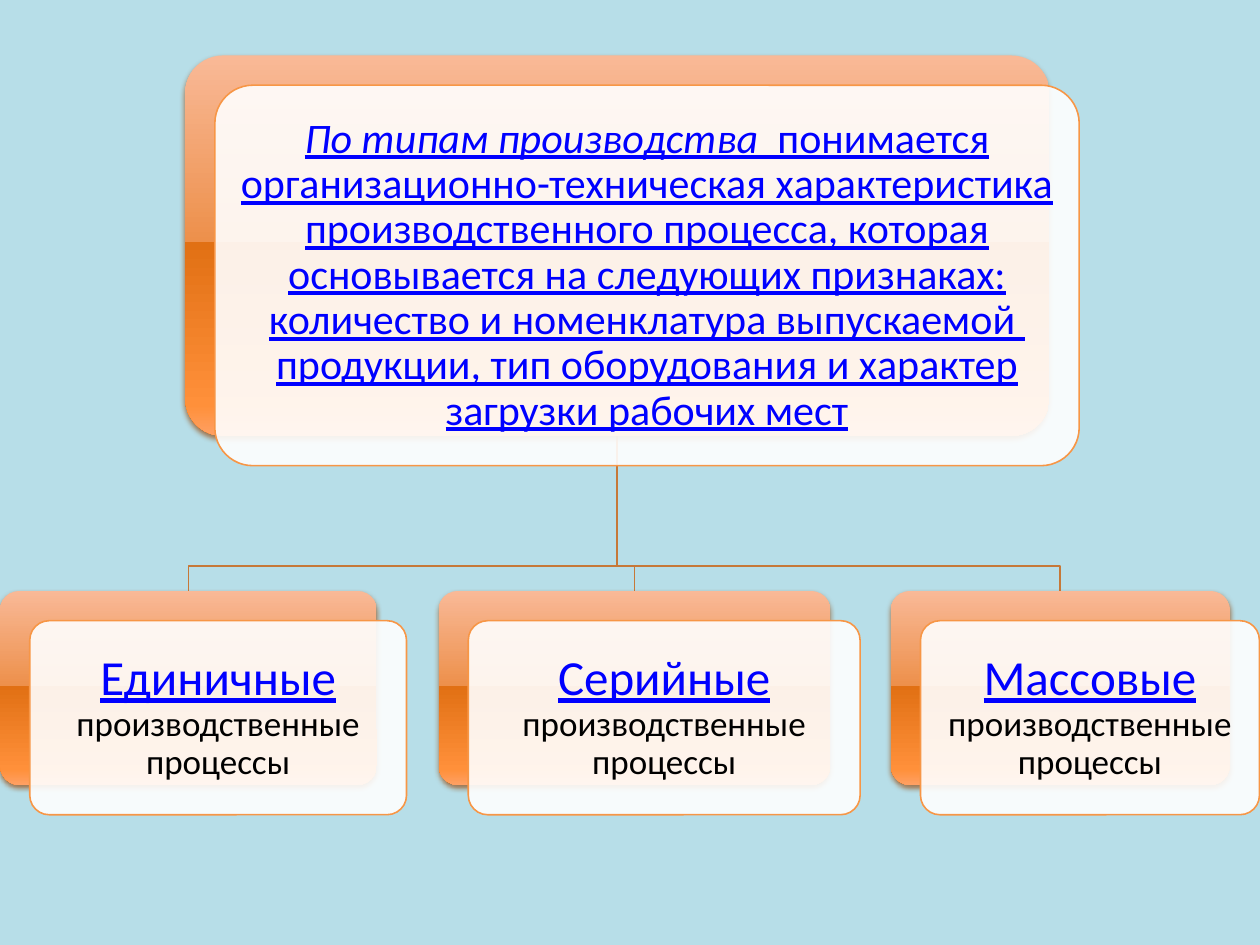
from lxml import etree
from pptx import Presentation
from pptx.dml.color import RGBColor
from pptx.enum.shapes import MSO_SHAPE
from pptx.enum.text import MSO_ANCHOR, PP_ALIGN
from pptx.oxml import parse_xml
from pptx.oxml.ns import nsdecls, qn
from pptx.util import Pt

THEME = {
    "font": "Calibri",
    "background": RGBColor.from_string("B7DEE8"),
    "connector": RGBColor.from_string("C67838"),
    "panel": RGBColor.from_string("FFFFFF"),
    "border": RGBColor.from_string("F79646"),
    "link": RGBColor.from_string("0000FF"),
    "text": RGBColor.from_string("000000"),
    "gradient": [(0, "F9B997"), (49, "ED904B"), (49, "E17014"),
                 (92, "FF903A"), (100, "FFA063")],
    "shadow": "995D2B",
    "definition_size": 24,
    "name_size": 28,
    "detail_size": 20,
}
LINE_WIDTH = Pt(0.9)
CORNER = 0.1
PANEL_SHIFT = 17
BEND_Y = 323.3

link = {"color": THEME["link"], "underline": True}
definition = {**link, "size": THEME["definition_size"]}
root = {
    "box": (105.8, 31.7, 493.9, 217.4),
    "margin": 7.2,
    "runs": [
        ("По типам производства ", {**definition, "italic": True}),
        (" понимается организационно-техническая характеристика "
         "производственного процесса, которая основывается на следующих "
         "признаках: количество и номенклатура выпускаемой  продукции, "
         "тип оборудования и характер загрузки рабочих мест", definition),
    ],
}
children = [
    {
        "box": (left, 337.7, width, 110.9),
        "margin": 8.6,
        "runs": [
            (name, {**link, "size": THEME["name_size"]}),
            (" производственные процессы",
             {"color": THEME["text"], "size": THEME["detail_size"]}),
        ],
    }
    for name, left, width in [("Единичные", 0, 215.3),
                              ("Серийные", 250.6, 223.9),
                              ("Массовые", 509, 193.7)]
]

presentation = Presentation()
presentation.slide_width, presentation.slide_height = Pt(720), Pt(540)
slide = presentation.slides.add_slide(presentation.slide_layouts[6])
slide.background.fill.solid()
slide.background.fill.fore_color.rgb = THEME["background"]


def add_rounded(left, top, width, height):
    shape = slide.shapes.add_shape(
        MSO_SHAPE.ROUNDED_RECTANGLE, Pt(left), Pt(top), Pt(width), Pt(height))
    shape.adjustments[0] = CORNER
    shape.shadow.inherit = False
    return shape


# Elbow lines from the bottom of the root card to the top of each child
left, top, width, height = root["box"]
root_x, root_bottom = left + width / 2, top + height
for child in children:
    left, top, width, height = child["box"]
    child_x = left + width / 2
    builder = slide.shapes.build_freeform(Pt(root_x), Pt(root_bottom))
    builder.add_line_segments(
        [(Pt(root_x), Pt(BEND_Y)), (Pt(child_x), Pt(BEND_Y)), (Pt(child_x), Pt(top))],
        close=False)
    elbow = builder.convert_to_shape()
    elbow.shadow.inherit = False
    elbow.fill.background()
    elbow.line.color.rgb = THEME["connector"]
    elbow.line.width = LINE_WIDTH

# Each card is a gradient back with a translucent text panel shifted over it
for card in [root, *children]:
    left, top, width, height = card["box"]

    back = add_rounded(left, top, width, height)
    back.line.fill.background()
    back.fill.gradient()
    properties = back._element.spPr
    gradient = properties.find(qn("a:gradFill"))
    stops = gradient.find(qn("a:gsLst"))
    for stop in list(stops):
        stops.remove(stop)
    for position, color in THEME["gradient"]:
        stops.append(parse_xml(
            f'<a:gs {nsdecls("a")} pos="{position * 1000}">'
            f'<a:srgbClr val="{color}"/></a:gs>'))
    gradient.find(qn("a:lin")).set("ang", "5400000")
    properties.find(qn("a:effectLst")).append(parse_xml(
        f'<a:outerShdw {nsdecls("a")} blurRad="{Pt(3.1)}" dist="{Pt(2)}" '
        f'dir="5400000" rotWithShape="0"><a:srgbClr val="{THEME["shadow"]}">'
        '<a:alpha val="83000"/></a:srgbClr></a:outerShdw>'))

    panel = add_rounded(left + PANEL_SHIFT, top + PANEL_SHIFT, width, height)
    panel.fill.solid()
    panel.fill.fore_color.rgb = THEME["panel"]
    color = panel._element.spPr.find(qn("a:solidFill")).find(qn("a:srgbClr"))
    etree.SubElement(color, qn("a:alpha")).set("val", "90000")
    panel.line.color.rgb = THEME["border"]
    panel.line.width = LINE_WIDTH

    # Rounded corners already inset the text by 0.29 of their radius
    frame = panel.text_frame
    frame.word_wrap = True
    frame.vertical_anchor = MSO_ANCHOR.MIDDLE
    inset = Pt(card["margin"] - 0.29 * CORNER * height)
    for side in ("left", "top", "right", "bottom"):
        setattr(frame, f"margin_{side}", inset)
    paragraph = frame.paragraphs[0]
    paragraph.alignment = PP_ALIGN.CENTER
    paragraph.line_spacing = 0.9
    for text, style in card["runs"]:
        run = paragraph.add_run()
        run.text = text
        run.font.color.rgb = style["color"]
        values = {
            "name": THEME["font"],
            "size": Pt(style["size"]),
            "underline": style.get("underline", False),
            "italic": style.get("italic", False),
        }
        for attribute, value in values.items():
            setattr(run.font, attribute, value)

presentation.save("out.pptx")
